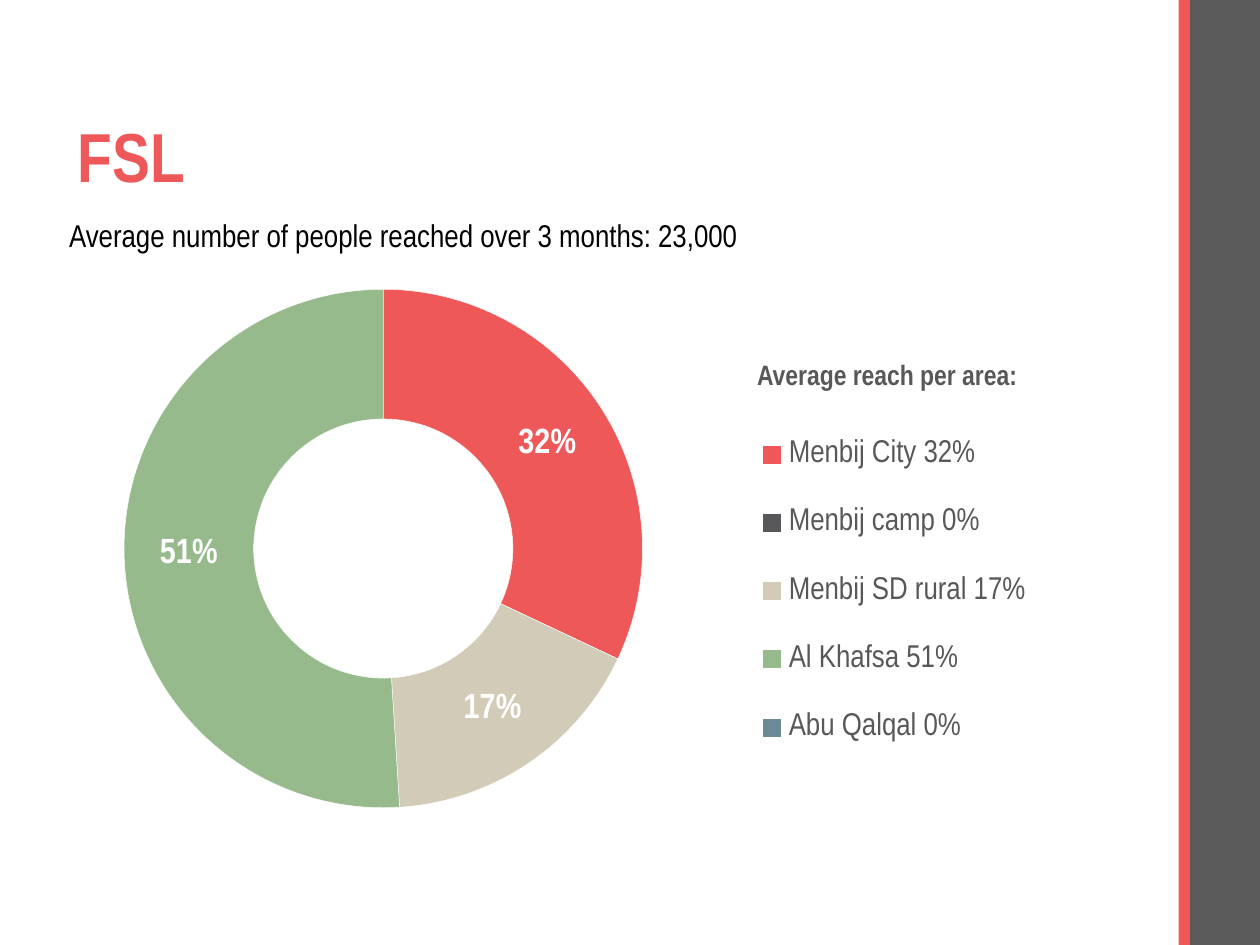
from lxml import etree
from pptx import Presentation
from pptx.chart.data import CategoryChartData
from pptx.dml.color import RGBColor as RGB
from pptx.enum.chart import XL_CHART_TYPE as Kind, XL_LEGEND_POSITION as Side
from pptx.enum.shapes import MSO_SHAPE as Shape
from pptx.enum.text import MSO_ANCHOR as Anchor, MSO_AUTO_SIZE as Fit, PP_ALIGN as Align
from pptx.oxml import parse_xml
from pptx.oxml.ns import nsdecls, qn
from pptx.util import Pt

THEME = {
    "font": "Arial Narrow",
    "red": "EE5859", "bar": "5A5A5A", "gray": "58585A", "black": "000000",
    "white": "FFFFFF", "sand": "D2CBB8", "green": "96BA8C", "blue": "6B8A95",
    "title": 39.6, "body": 18, "head": 16, "label": 20,
}
TITLE = "FSL"
REACH = "Average number of people reached over 3 months: 23,000"
HEAD = "Average reach per area:"
AREAS = [
    ("Menbij City", 32, "red"),
    ("Menbij camp", 0, "gray"),
    ("Menbij SD rural", 17, "sand"),
    ("Al Khafsa", 51, "green"),
    ("Abu Qalqal", 0, "blue"),
]
# left, top, width, height in points
BARS = [("bar", (678.6, 0, 41.4, 540)), ("red", (673.6, 0, 6.4, 540))]
TITLE_BOX = (29.5, 66.2, 620.6, 51.1)
REACH_BOX = (32.4, 120.2, 592.6, 28.8)
HEAD_BOX = (425.5, 200.9, 164.2, 26.6)
CHART_BOX = (29.5, 154.1, 621.4, 375.1)
# x, y, width, height as shares of the chart
PLOT = (0.04, 0.03, 0.53, 0.79)
KEYS = (0.64, 0.2, 0.27, 0.58)


def color(name):
    return RGB.from_string(THEME[name])


def style(font, size, tint, bold=False):
    font.name, font.size, font.bold = THEME["font"], Pt(THEME[size]), bold
    font.color.rgb = color(tint)


def place(shape, box):
    shape.left, shape.top, shape.width, shape.height = map(Pt, box)


def write(shape, text, size="body", tint="black", bold=False, wrap=True,
          anchor=Anchor.TOP, fit=Fit.SHAPE_TO_FIT_TEXT, inset=7.2, lines=None):
    frame = shape.text_frame
    frame.word_wrap, frame.auto_size = wrap, fit
    frame.vertical_anchor, frame.margin_left = anchor, Pt(inset)
    para = frame.paragraphs[0]
    para.alignment, para.line_spacing = Align.LEFT, lines
    run = para.add_run()
    run.text = text
    style(run.font, size, tint, bold)


def layout(shares, inner=False):
    """Return a manual chart layout element."""
    target = '<c:layoutTarget val="inner"/>' if inner else ""
    modes = "".join(f'<c:{k}Mode val="edge"/>' for k in "xy")
    sizes = "".join(f'<c:{k} val="{v}"/>' for k, v in zip("xywh", shares))
    return parse_xml(f'<c:layout {nsdecls("c")}><c:manualLayout>{target}{modes}'
                     f'{sizes}</c:manualLayout></c:layout>')


def set_layout(part, shares, inner=False):
    for old in part.findall(qn("c:layout")):
        part.remove(old)
    if inner:
        part.insert(0, layout(shares, inner))
    else:
        part.find(qn("c:legendPos")).addnext(layout(shares))


def add_ring(slide):
    data = CategoryChartData()
    data.categories = [f"{name} {value}%" for name, value, _ in AREAS]
    data.add_series("Series 1", [value for _, value, _ in AREAS])
    chart = slide.shapes.add_chart(
        Kind.DOUGHNUT, *map(Pt, CHART_BOX), data).chart
    chart.has_title = False
    style(chart.font, "body", "black")
    chart.has_legend = True
    keys = chart.legend
    keys.position, keys.include_in_layout = Side.RIGHT, False
    style(keys.font, "body", "gray")
    set_layout(keys._element, KEYS)

    plot = chart.plots[0]
    plot.vary_by_categories = True
    set_layout(chart._chartSpace.chart.plotArea, PLOT, inner=True)
    plot._element.find(qn("c:holeSize")).set("val", "65")
    ring = plot.series[0]
    labels = ring.data_labels
    labels.show_percentage, labels.show_value = True, False
    labels.number_format, labels.number_format_is_linked = "0%", False
    style(labels.font, "label", "white", bold=True)
    spot = 0
    for i, (_, value, tint) in enumerate(AREAS):
        form = ring.points[i].format
        form.fill.solid()
        form.fill.fore_color.rgb = color(tint)
        form.line.color.rgb, form.line.width = color("white"), Pt(0.25)
        if not value:
            mute = etree.Element(qn("c:dLbl"))
            etree.SubElement(mute, qn("c:idx")).set("val", str(i))
            etree.SubElement(mute, qn("c:delete")).set("val", "1")
            labels._element.insert(spot, mute)
            spot += 1


def main():
    deck = Presentation()
    deck.slide_width, deck.slide_height = Pt(720), Pt(540)
    slide = deck.slides.add_slide(deck.slide_layouts[5])
    for tint, box in BARS:
        bar = slide.shapes.add_shape(Shape.RECTANGLE, *map(Pt, box))
        bar.shadow.inherit = False
        bar.fill.solid()
        bar.fill.fore_color.rgb = color(tint)
        bar.line.fill.background()
    add_ring(slide)
    title = slide.shapes.title
    place(title, TITLE_BOX)
    write(title, TITLE, size="title", tint="red", bold=True,
          anchor=Anchor.MIDDLE, fit=Fit.NONE, inset=14.8, lines=0.9)
    reach = slide.shapes.add_textbox(*map(Pt, REACH_BOX))
    write(reach, REACH)
    head = slide.shapes.add_textbox(*map(Pt, HEAD_BOX))
    write(head, HEAD, size="head", tint="gray", bold=True, wrap=False)
    deck.save("out.pptx")


if __name__ == "__main__":
    main()
